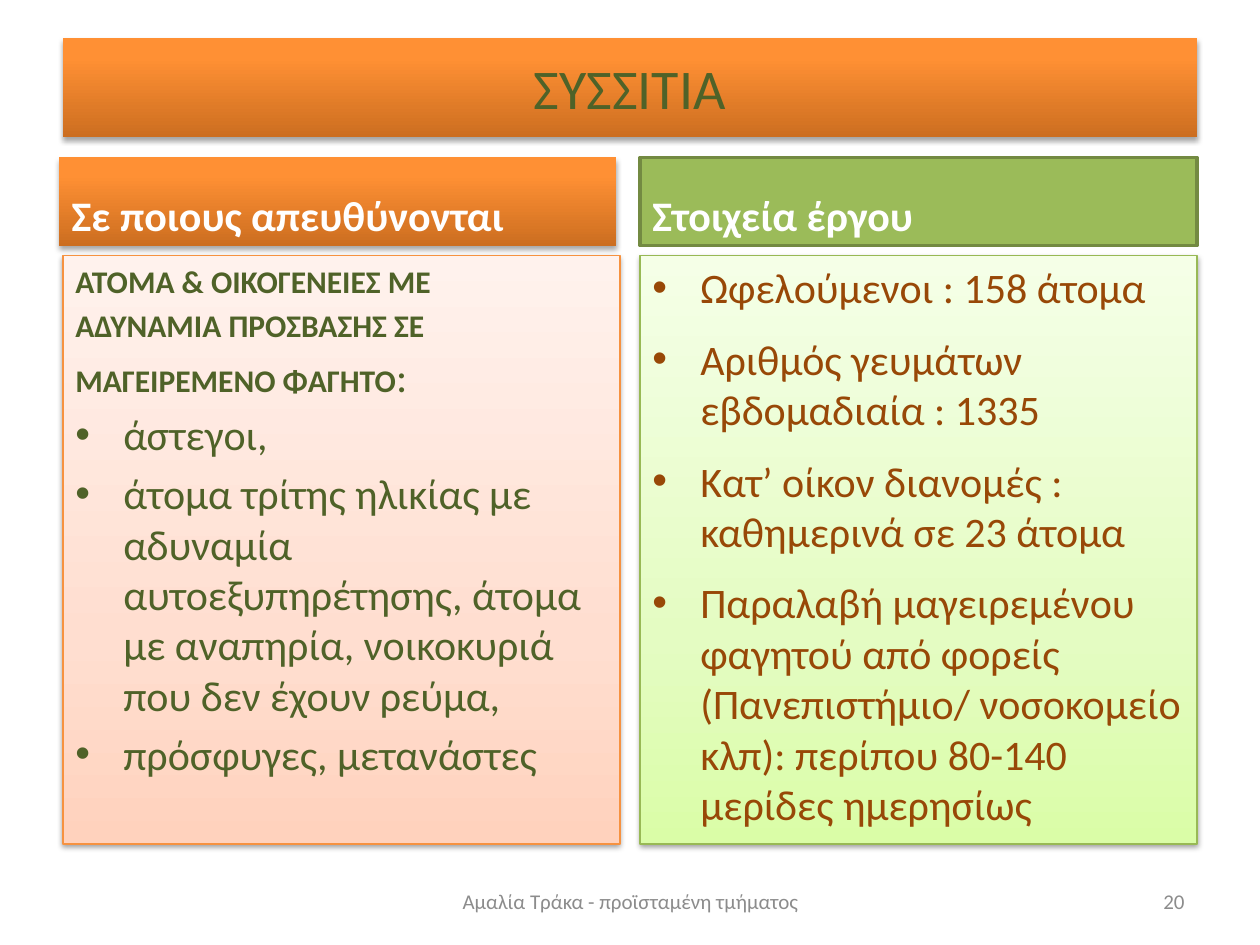
from lxml.etree import SubElement
from pptx import Presentation
from pptx.dml.color import RGBColor
from pptx.enum.shapes import MSO_SHAPE as Shape
from pptx.enum.text import MSO_ANCHOR as Anchor, PP_ALIGN as Align
from pptx.oxml.ns import qn
from pptx.util import Inches, Pt

WHITE = RGBColor(0xFF, 0xFF, 0xFF)
GRAY = RGBColor(0x8C, 0x8C, 0x8C)
DARK_GREEN = RGBColor(0x4F, 0x62, 0x28)
BROWN = RGBColor(0x98, 0x48, 0x07)
GREEN = RGBColor(0x9B, 0xBB, 0x59)
GREEN_EDGE = RGBColor(0x73, 0x8A, 0x42)
LIGHT_GREEN_EDGE = RGBColor(0x98, 0xB9, 0x55)
ORANGE_EDGE = RGBColor(0xF6, 0x92, 0x40)

# Gradient stops run from bottom to top: position in percent, colour
ORANGE_STOPS = [(0, RGBColor(0xCC, 0x6E, 0x20)), (80, RGBColor(0xFF, 0x90, 0x34)),
                (100, RGBColor(0xFF, 0x91, 0x36))]
PEACH_STOPS = [(0, RGBColor(0xFF, 0xD2, 0xBD)), (35, RGBColor(0xFF, 0xDE, 0xD0)),
               (100, RGBColor(0xFF, 0xF2, 0xED))]
LIME_STOPS = [(0, RGBColor(0xDA, 0xFD, 0xA7)), (35, RGBColor(0xE4, 0xFC, 0xC2)),
              (100, RGBColor(0xF5, 0xFF, 0xE7))]

LEFT, RIGHT = 0.5, 5.08
COLUMN_WIDTH = 4.42
HEADING_TOP, HEADING_HEIGHT = 1.25, 0.7
BODY_TOP, BODY_HEIGHT = 2.03, 4.67
FOOTER_TOP, FOOTER_HEIGHT = 6.95, 0.4

AUDIENCE_INTRO = ["ΑΤΟΜΑ & ΟΙΚΟΓΕΝΕΙΕΣ ΜΕ", "ΑΔΥΝΑΜΙΑ ΠΡΟΣΒΑΣΗΣ ΣΕ", "ΜΑΓΕΙΡΕΜΕΝΟ ΦΑΓΗΤΟ"]
AUDIENCE = [
    "άστεγοι,",
    "άτομα τρίτης ηλικίας με αδυναμία αυτοεξυπηρέτησης, άτομα με αναπηρία, "
    "νοικοκυριά που δεν έχουν ρεύμα,",
    "πρόσφυγες, μετανάστες",
]
PROJECT_FACTS = [
    "Ωφελούμενοι : 158 άτομα",
    "Αριθμός γευμάτων εβδομαδιαία : 1335",
    "Κατ’ οίκον διανομές : καθημερινά σε 23 άτομα",
    "Παραλαβή μαγειρεμένου φαγητού από φορείς (Πανεπιστήμιο/ νοσοκομείο κλπ): "
    "περίπου 80-140 μερίδες ημερησίως",
]


def add_color(parent, color):
    return SubElement(parent, qn("a:srgbClr"), val=str(color))


def fill_gradient(shape, stops):
    shape.fill.gradient()
    shape.fill.gradient_angle = 90
    stop_list = shape._element.spPr.find(qn("a:gradFill")).find(qn("a:gsLst"))
    for old_stop in list(stop_list):
        stop_list.remove(old_stop)
    for position, color in stops:
        add_color(SubElement(stop_list, qn("a:gs"), pos=str(position * 1000)), color)


def add_drop_shadow(shape, distance, opacity):
    effects = shape._element.spPr.find(qn("a:effectLst"))
    shadow = SubElement(effects, qn("a:outerShdw"), blurRad=str(Pt(3.1)),
                        dist=str(Pt(distance)), dir="5400000", rotWithShape="0")
    color = add_color(shadow, RGBColor(0, 0, 0))
    SubElement(color, qn("a:alpha"), val=str(opacity * 1000))


def add_panel(slide, left, top, width, height, fill, edge=None, edge_width=0.75,
              shadow=None, anchor=Anchor.TOP):
    """Add a rectangle; fill is one colour or a list of gradient stops."""
    shape = slide.shapes.add_shape(Shape.RECTANGLE, Inches(left), Inches(top),
                                   Inches(width), Inches(height))
    shape.shadow.inherit = False
    if isinstance(fill, list):
        fill_gradient(shape, fill)
    else:
        shape.fill.solid()
        shape.fill.fore_color.rgb = fill
    if edge is None:
        shape.line.fill.background()
    else:
        shape.line.color.rgb = edge
        shape.line.width = Pt(edge_width)
    if shadow:
        add_drop_shadow(shape, *shadow)
    shape.text_frame.word_wrap = True
    shape.text_frame.vertical_anchor = anchor
    return shape.text_frame


def add_run(paragraph, text, size, color, bold=False):
    run = paragraph.add_run()
    run.text = text
    run.font.name = "Calibri"
    run.font.size = Pt(size)
    run.font.bold = bold
    run.font.color.rgb = color


def add_paragraph(frame, text, size, color, bold=False, align=Align.LEFT,
                  space=0, hanging=False, bullet=False):
    """Add a paragraph, using the empty first one if it is still free."""
    first = frame.paragraphs[0]
    paragraph = frame.add_paragraph() if first.runs else first
    paragraph.alignment = align
    if paragraph is not first:
        paragraph.space_before = Pt(space)
    properties = paragraph._p.get_or_add_pPr()
    if hanging:
        properties.set("marL", str(Inches(0.38)))
        properties.set("indent", str(-Inches(0.38)))
    if bullet:
        SubElement(properties, qn("a:buFont"), typeface="Arial")
        SubElement(properties, qn("a:buChar"), char="•")
    add_run(paragraph, text, size, color, bold)
    return paragraph


def add_bullets(frame, items, color, space):
    for item in items:
        add_paragraph(frame, item, 24, color, space=space, hanging=True, bullet=True)


def add_footer(slide, left, width, text, align):
    box = slide.shapes.add_textbox(Inches(left), Inches(FOOTER_TOP),
                                   Inches(width), Inches(FOOTER_HEIGHT))
    box.text_frame.word_wrap = True
    box.text_frame.vertical_anchor = Anchor.MIDDLE
    add_paragraph(box.text_frame, text, 12, GRAY, align=align)


def main():
    presentation = Presentation()
    presentation.slide_width, presentation.slide_height = Inches(10), Inches(7.5)
    slide = presentation.slides.add_slide(presentation.slide_layouts[6])
    strong_shadow, soft_shadow = (1.8, 35), (1.6, 38)

    title = add_panel(slide, LEFT, 0.3, 9, 0.79, ORANGE_STOPS,
                      shadow=strong_shadow, anchor=Anchor.MIDDLE)
    add_paragraph(title, "ΣΥΣΣΙΤΙΑ", 32, DARK_GREEN, align=Align.CENTER)

    audience_heading = add_panel(slide, 0.47, HEADING_TOP, COLUMN_WIDTH, HEADING_HEIGHT,
                                 ORANGE_STOPS, shadow=strong_shadow, anchor=Anchor.BOTTOM)
    add_paragraph(audience_heading, "Σε ποιους απευθύνονται", 24, WHITE, bold=True)

    audience = add_panel(slide, LEFT, BODY_TOP, COLUMN_WIDTH, BODY_HEIGHT, PEACH_STOPS,
                         ORANGE_EDGE, shadow=soft_shadow)
    for line in AUDIENCE_INTRO:
        intro = add_paragraph(audience, line, 18, DARK_GREEN, bold=True,
                              align=Align.JUSTIFY, space=3.6, hanging=True)
    add_run(intro, ":", 24, DARK_GREEN)
    add_bullets(audience, AUDIENCE, DARK_GREEN, space=4.8)

    facts_heading = add_panel(slide, RIGHT, HEADING_TOP, COLUMN_WIDTH, HEADING_HEIGHT,
                              GREEN, GREEN_EDGE, edge_width=2, anchor=Anchor.BOTTOM)
    add_paragraph(facts_heading, "Στοιχεία έργου", 24, WHITE, bold=True)

    facts = add_panel(slide, RIGHT, BODY_TOP, COLUMN_WIDTH, BODY_HEIGHT, LIME_STOPS,
                      LIGHT_GREEN_EDGE, shadow=soft_shadow)
    add_bullets(facts, PROJECT_FACTS, BROWN, space=12)

    add_footer(slide, 3.42, 3.17, "Αμαλία Τράκα - προϊσταμένη τμήματος", Align.CENTER)
    add_footer(slide, 7.17, 2.33, "20", Align.RIGHT)

    presentation.save("out.pptx")


if __name__ == "__main__":
    main()
